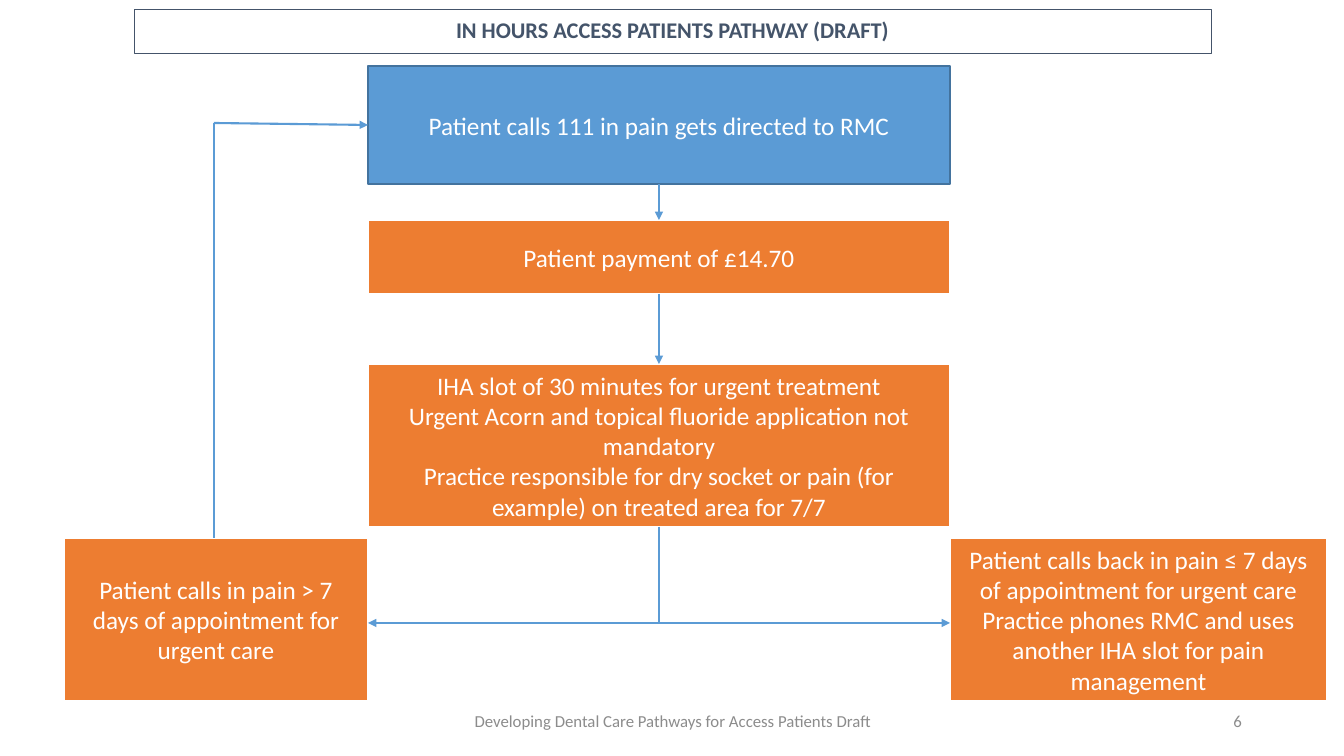
"""Build the in-hours access patients pathway flowchart slide."""
from dataclasses import dataclass

from lxml.etree import SubElement
from pptx import Presentation
from pptx.dml.color import RGBColor
from pptx.enum.shapes import MSO_CONNECTOR as Connector, MSO_SHAPE as Shape
from pptx.enum.text import MSO_ANCHOR as Anchor, MSO_AUTO_SIZE as AutoSize, PP_ALIGN as Align
from pptx.oxml.ns import qn
from pptx.util import Pt


@dataclass(frozen=True)
class Theme:
    font: str = "Calibri"
    white: str = "FFFFFF"
    blue: str = "5B9BD5"
    blue_edge: str = "43739E"
    orange: str = "ED7D31"
    navy: str = "44546A"
    grey: str = "8C8C8C"
    heading_size: int = 16
    step_size: int = 18
    footer_size: int = 12


THEME = Theme()
EMU_PER_PX = 914400 / 100.8
SLIDE_SIZE = (1344, 756)

HEADING = "IN HOURS ACCESS PATIENTS PATHWAY (DRAFT)"
HEADING_BOX = (134, 9, 1077, 44)

CALL_STYLE = (THEME.blue, THEME.blue_edge, 1)
CARE_STYLE = (THEME.orange, THEME.white, 1.5)
STEPS = {
    "call": ((368, 66, 582, 118), CALL_STYLE,
             ["Patient calls 111 in pain gets directed to RMC"]),
    "payment": ((368, 220, 582, 74), CARE_STYLE, ["Patient payment of £14.70"]),
    "slot": ((368, 364, 582, 163), CARE_STYLE,
             ["IHA slot of 30 minutes for urgent treatment",
              "Urgent Acorn and topical fluoride application not mandatory",
              "Practice responsible for dry socket or pain (for example) "
              "on treated area for 7/7"]),
    "late": ((64, 538, 304, 163), CARE_STYLE,
             ["Patient calls in pain > 7 days of appointment for urgent care"]),
    "early": ((950, 538, 377, 163), CARE_STYLE,
              ["Patient calls back in pain ≤ 7 days of appointment for urgent care",
               "Practice phones RMC and uses another IHA slot for pain management"]),
}
SEQUENCE = [("call", "payment"), ("payment", "slot")]
BOTTOM_SITE, TOP_SITE = 2, 0

FOOTERS = [
    ((446, 701, 454, 40), Align.CENTER,
     "Developing Dental Care Pathways for Access Patients Draft"),
    ((950, 701, 302, 40), Align.RIGHT, "6"),
]


def px(*lengths):
    return [round(length * EMU_PER_PX) for length in lengths]


def paint(shape, fill, edge, width):
    shape.fill.solid()
    shape.fill.fore_color.rgb = RGBColor.from_string(fill)
    shape.line.color.rgb = RGBColor.from_string(edge)
    shape.line.width = Pt(width)


def write(shape, lines, size, color, align=Align.CENTER, anchor=Anchor.MIDDLE, bold=False):
    frame = shape.text_frame
    frame.word_wrap = True
    frame.auto_size = AutoSize.NONE
    frame.vertical_anchor = anchor
    for index, line in enumerate(lines):
        paragraph = frame.add_paragraph() if index else frame.paragraphs[0]
        paragraph.alignment = align
        run = paragraph.add_run()
        run.text = line
        run.font.name = THEME.font
        run.font.size = Pt(size)
        run.font.bold = bold
        run.font.color.rgb = RGBColor.from_string(color)


def connect(slide, start=(0, 0), end=(0, 0), arrow=True):
    link = slide.shapes.add_connector(Connector.STRAIGHT, *px(*start, *end))
    link.line.color.rgb = RGBColor.from_string(THEME.blue)
    link.line.width = Pt(1.5)
    if arrow:
        SubElement(link.line._get_or_add_ln(), qn("a:tailEnd"), type="triangle")
    SubElement(link._element.spPr, qn("a:effectLst"))
    return link


def add_heading(slide):
    heading = slide.shapes.title
    heading.left, heading.top, heading.width, heading.height = px(*HEADING_BOX)
    paint(heading, THEME.white, THEME.navy, 0.5)
    write(heading, [HEADING], THEME.heading_size, THEME.navy, anchor=Anchor.TOP, bold=True)
    paragraph = heading.text_frame.paragraphs[0]
    paragraph.line_spacing = 1.07
    paragraph.space_after = Pt(8)


def add_steps(slide):
    steps = {}
    for name, (box, style, lines) in STEPS.items():
        step = slide.shapes.add_shape(Shape.RECTANGLE, *px(*box))
        step.shadow.inherit = False
        paint(step, *style)
        write(step, lines, THEME.step_size, THEME.white)
        steps[name] = step
    return steps


def add_links(slide, steps):
    for source, target in SEQUENCE:
        link = connect(slide)
        link.begin_connect(steps[source], BOTTOM_SITE)
        link.end_connect(steps[target], TOP_SITE)

    left, top, width, height = STEPS["slot"][0]
    fork = (left + width / 2, 623)
    connect(slide, (fork[0], top + height), fork, arrow=False)
    for side in (left, left + width):
        connect(slide, fork, (side, fork[1]))

    return_corner = (214, 123)
    connect(slide, (return_corner[0], STEPS["late"][0][1]), return_corner, arrow=False)
    connect(slide, return_corner, (left, 125))


def main():
    deck = Presentation()
    deck.slide_width, deck.slide_height = px(*SLIDE_SIZE)
    slide = deck.slides.add_slide(deck.slide_layouts[5])
    add_heading(slide)
    add_links(slide, add_steps(slide))
    for box, align, text in FOOTERS:
        footer = slide.shapes.add_textbox(*px(*box))
        write(footer, [text], THEME.footer_size, THEME.grey, align)
    deck.save("out.pptx")


if __name__ == "__main__":
    main()
